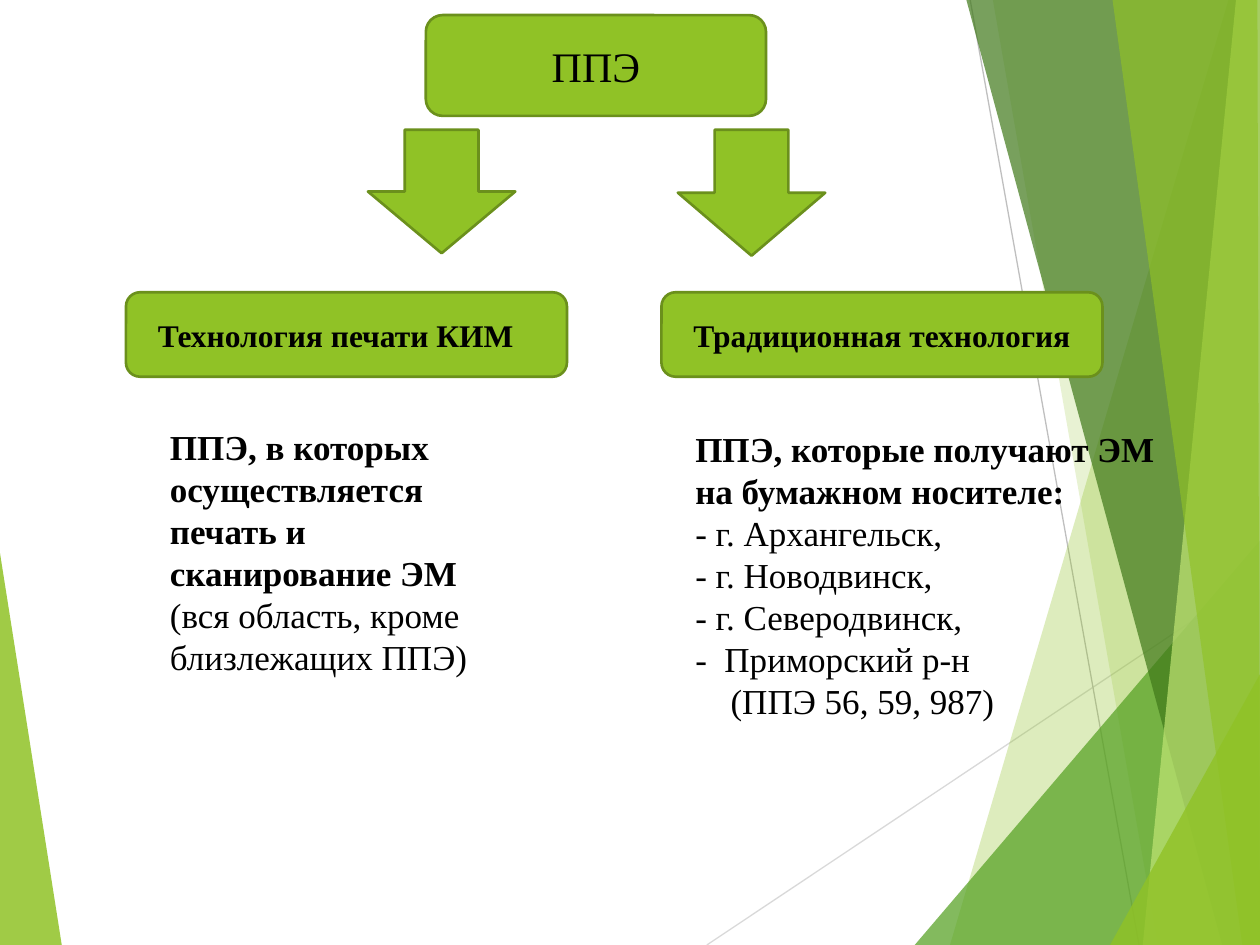
from lxml.etree import SubElement
from pptx import Presentation
from pptx.dml.color import RGBColor
from pptx.enum.shapes import MSO_CONNECTOR, MSO_SHAPE
from pptx.enum.text import MSO_ANCHOR, PP_ALIGN
from pptx.oxml.ns import qn
from pptx.util import Inches, Pt

LIME = RGBColor(0x90, 0xC2, 0x26)
OLIVE = RGBColor(0x6B, 0x90, 0x1C)
GREEN = RGBColor(0x54, 0xA0, 0x21)
FOREST = RGBColor(0x3F, 0x78, 0x19)
PALE = RGBColor(0xC0, 0xE4, 0x74)
GREY = RGBColor(0xBF, 0xBF, 0xBF)
LIGHT_GREY = RGBColor(0xD9, 0xD9, 0xD9)
BLACK = RGBColor(0, 0, 0)
FONT = "Times New Roman"
W, H = 10, 7.5

LEFT_FACET = ([(0, 4.39), (0.49, H), (0, H)], LIME, 85)
RIGHT_FACETS = [
    ([(9.75, 0), (7.54, H), (W, H), (W, 0)], LIME, 30),
    ([(7.88, 0), (9.19, H), (W, H), (W, 0)], LIME, 20),
    ([(7.26, H), (W, 4.29), (W, H)], GREEN, 72),
    ([(7.67, 0), (9.7, H), (W, H), (W, 0)], FOREST, 70),
    ([(9.81, 0), (9.07, H), (W, H), (W, 0)], PALE, 70),
    ([(8.83, 0), (9.86, H), (W, H), (9.98, 0)], LIME, 65),
    ([(8.81, H), (W, 5.35), (W, H)], LIME, 80),
]
RAYS = [((5.61, H), (W, 4.57), LIGHT_GREY), ((7.7, 0), (9.04, H), GREY)]


def add_facet(s, points, color, opacity):
    pts = [(Inches(x), Inches(y)) for x, y in points]
    builder = s.shapes.build_freeform(*pts[0])
    builder.add_line_segments(pts[1:], close=True)
    sp = builder.convert_to_shape()
    sp.shadow.inherit = False
    sp.line.fill.background()
    sp.fill.solid()
    sp.fill.fore_color.rgb = color
    clr = sp._element.spPr.find(qn("a:solidFill"))[0]
    SubElement(clr, qn("a:alpha")).set("val", str(opacity * 1000))


def add_ray(s, start, end, color):
    line = s.shapes.add_connector(
        MSO_CONNECTOR.STRAIGHT, *(Inches(v) for v in start + end))
    line.line.color.rgb = color
    line.line.width = Pt(0.75)
    SubElement(line._element.spPr, qn("a:effectLst"))


def add_backdrop(s):
    add_facet(s, *LEFT_FACET)
    for ray in RAYS:
        add_ray(s, *ray)
    for facet in RIGHT_FACETS:
        add_facet(s, *facet)


def set_font(p, size, bold=False):
    p.font.name = FONT
    p.font.size = Pt(size)
    p.font.bold = bold
    p.font.color.rgb = BLACK


def add_block(s, kind, box):
    sp = s.shapes.add_shape(kind, *(Inches(v) for v in box))
    sp.shadow.inherit = False
    sp.fill.solid()
    sp.fill.fore_color.rgb = LIME
    sp.line.color.rgb = OLIVE
    sp.line.width = Pt(1.5)
    return sp


def add_label(s, box, text, size, bold=False, align=PP_ALIGN.LEFT, indent=0.1):
    tf = add_block(s, MSO_SHAPE.ROUNDED_RECTANGLE, box).text_frame
    tf.word_wrap = True
    tf.vertical_anchor = MSO_ANCHOR.MIDDLE
    tf.margin_left = Inches(indent)
    p = tf.paragraphs[0]
    p.text = text
    p.alignment = align
    set_font(p, size, bold)


def add_description(s, box, paragraphs):
    tf = s.shapes.add_textbox(*(Inches(v) for v in box)).text_frame
    tf.word_wrap = True
    for i, (runs, indent) in enumerate(paragraphs):
        p = tf.paragraphs[0] if i == 0 else tf.add_paragraph()
        set_font(p, 20)
        if indent:
            p._p.get_or_add_pPr().set("marL", str(Inches(indent)))
        for text, bold in runs:
            r = p.add_run()
            r.text = text
            r.font.size = Pt(20)
            r.font.name = FONT
            r.font.color.rgb = BLACK
            r.font.bold = bold


def add_branch(s, left, title, arrow_box, text_box, paragraphs):
    add_description(s, text_box, paragraphs)
    add_label(s, (left, 2.32, 3.5, 0.67), title, 18, bold=True, indent=0.22)
    add_block(s, MSO_SHAPE.DOWN_ARROW, arrow_box)


def main():
    prs = Presentation()
    prs.slide_width, prs.slide_height = Inches(W), Inches(H)
    s = prs.slides.add_slide(prs.slide_layouts[6])
    add_backdrop(s)
    add_label(s, (3.38, 0.12, 2.7, 0.8), "ППЭ", 24, align=PP_ALIGN.CENTER)
    add_branch(
        s, 1, "Технология печати КИМ", (2.92, 1.03, 1.17, 0.98),
        (1.25, 3.33, 3, 2.12),
        [([("ППЭ, в которых осуществляется печать и сканирование ЭМ ", True),
           ("(вся область, кроме близлежащих ППЭ)", False)], 0)])
    places = ["- г. Архангельск,", "- г. Новодвинск,", "- г. Северодвинск,",
              "-  Приморский р-н"]
    add_branch(
        s, 5.25, "Традиционная технология", (5.38, 1.03, 1.17, 1),
        (5.42, 3.34, 4.17, 2.46),
        [([("ППЭ, которые получают ЭМ на бумажном носителе:", True)], 0)]
        + [([(place, False)], 0) for place in places]
        + [([("(ППЭ 56, 59, 987)", False)], 0.28)])
    prs.save("out.pptx")


if __name__ == "__main__":
    main()
